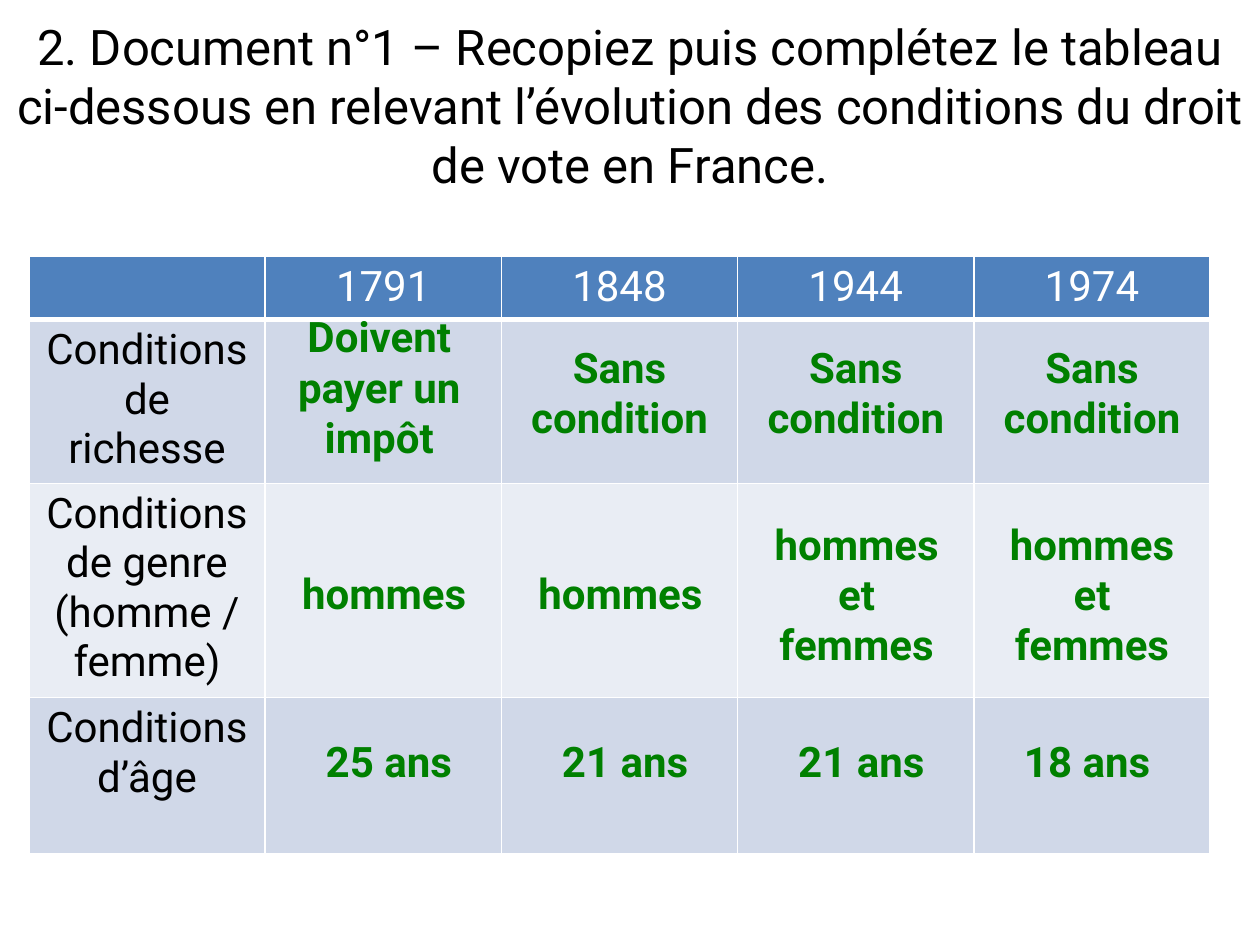
from pptx import Presentation
from pptx.dml.color import RGBColor
from pptx.enum.text import MSO_ANCHOR as Anchor, MSO_AUTO_SIZE as AutoSize, PP_ALIGN as Align
from pptx.oxml.ns import qn
from pptx.util import Pt
from lxml.etree import SubElement

COLORS = {
    "black": "000000",
    "white": "FFFFFF",
    "header": "4F81BD",
    "band_dark": "D0D8E8",
    "band_light": "E9EDF4",
    "answer": "008000",
}
FONT = "Roboto"
TITLE = (
    "2. Document n°1 – Recopiez puis complétez le tableau ci-dessous en relevant "
    "l’évolution des conditions du droit de vote en France."
)
YEARS = ["1791", "1848", "1944", "1974"]
CONDITIONS = [
    "Conditions de richesse",
    "Conditions de genre\n(homme / femme)",
    "Conditions d’âge",
]
ROW_HEIGHTS = [36, 89.25, 111.75, 89.25]
ROW_FILLS = ["header", "band_dark", "band_light", "band_dark"]
COLUMN_WIDTH = 135

# text, left, top, width, height
BOTH = "hommes\net\nfemmes"
ANSWERS = [
    ("Doivent payer un impôt", 152, 174, 129.5, 94.5),
    ("Sans condition", 286.5, 191.5, 135, 65.5),
    ("Sans condition", 421.5, 191.5, 135, 65.5),
    ("Sans condition", 556.5, 191.5, 135, 65.5),
    ("hommes", 146.5, 320.5, 146, 36),
    ("hommes", 281.5, 320.5, 146, 36),
    (BOTH, 416.5, 292.5, 146, 94.5),
    (BOTH, 556.5, 292.5, 135, 94.5),
    ("25 ans", 157.5, 416.5, 129.5, 36),
    ("21 ans", 292.5, 416.5, 129.5, 36),
    ("21 ans", 427.5, 416.5, 129.5, 36),
    ("18 ans", 556.5, 416.5, 129.5, 36),
]


def rgb(name):
    return RGBColor.from_string(COLORS[name])


class SlideBuilder:
    def __init__(self, page, font):
        self.page = page
        self.font = font

    def set_text(self, frame, text, color, size=24, bold=False):
        frame.text = text
        for para in frame.paragraphs:
            para.alignment = Align.CENTER
            para.font.name = self.font
            para.font.size = Pt(size)
            para.font.bold = bold
            para.font.color.rgb = rgb(color)

    def title(self, text, *area):
        box = self.page.shapes.title
        box.left, box.top, box.width, box.height = map(Pt, area)
        frame = box.text_frame
        frame.vertical_anchor = Anchor.MIDDLE
        frame.auto_size = AutoSize.SHAPE_TO_FIT_TEXT
        self.set_text(frame, text, "black", 28)

    def answer(self, text, *area):
        box = self.page.shapes.add_textbox(*map(Pt, area))
        frame = box.text_frame
        frame.word_wrap = True
        frame.auto_size = AutoSize.SHAPE_TO_FIT_TEXT
        self.set_text(frame, text, "answer", bold=True)

    def borders(self, cell, **widths):
        """Draw white cell borders, 1 pt unless a side is given its own width."""
        properties = cell._tc.get_or_add_tcPr()
        for side in "LRTB":
            width = Pt(widths.get(side, 1))
            line = SubElement(properties, qn(f"a:ln{side}"), w=str(int(width)))
            fill = SubElement(line, qn("a:solidFill"))
            SubElement(fill, qn("a:srgbClr"), val=COLORS["white"])

    def table(self, rows, left, top):
        width = COLUMN_WIDTH * len(rows[0])
        area = map(Pt, (left, top, width, sum(ROW_HEIGHTS)))
        table = self.page.shapes.add_table(len(rows), len(rows[0]), *area).table
        for column in table.columns:
            column.width = Pt(COLUMN_WIDTH)
        for index, texts in enumerate(rows):
            table.rows[index].height = Pt(ROW_HEIGHTS[index])
            thick = {0: {"B": 3}, 1: {"T": 3}}.get(index, {})
            for cell, text in zip(table.rows[index].cells, texts):
                self.borders(cell, **thick)
                cell.fill.solid()
                cell.fill.fore_color.rgb = rgb(ROW_FILLS[index])
                self.set_text(cell.text_frame, text, "black" if index else "white")


def main():
    deck = Presentation()
    deck.slide_width, deck.slide_height = Pt(720), Pt(540)
    builder = SlideBuilder(deck.slides.add_slide(deck.slide_layouts[5]), FONT)

    builder.title(TITLE, 0, 22.5, 720, 75)
    rows = [["", *YEARS]] + [[text] + [""] * len(YEARS) for text in CONDITIONS]
    builder.table(rows, 16.5, 146.5)
    for answer in ANSWERS:
        builder.answer(*answer)

    deck.save("out.pptx")


if __name__ == "__main__":
    main()
